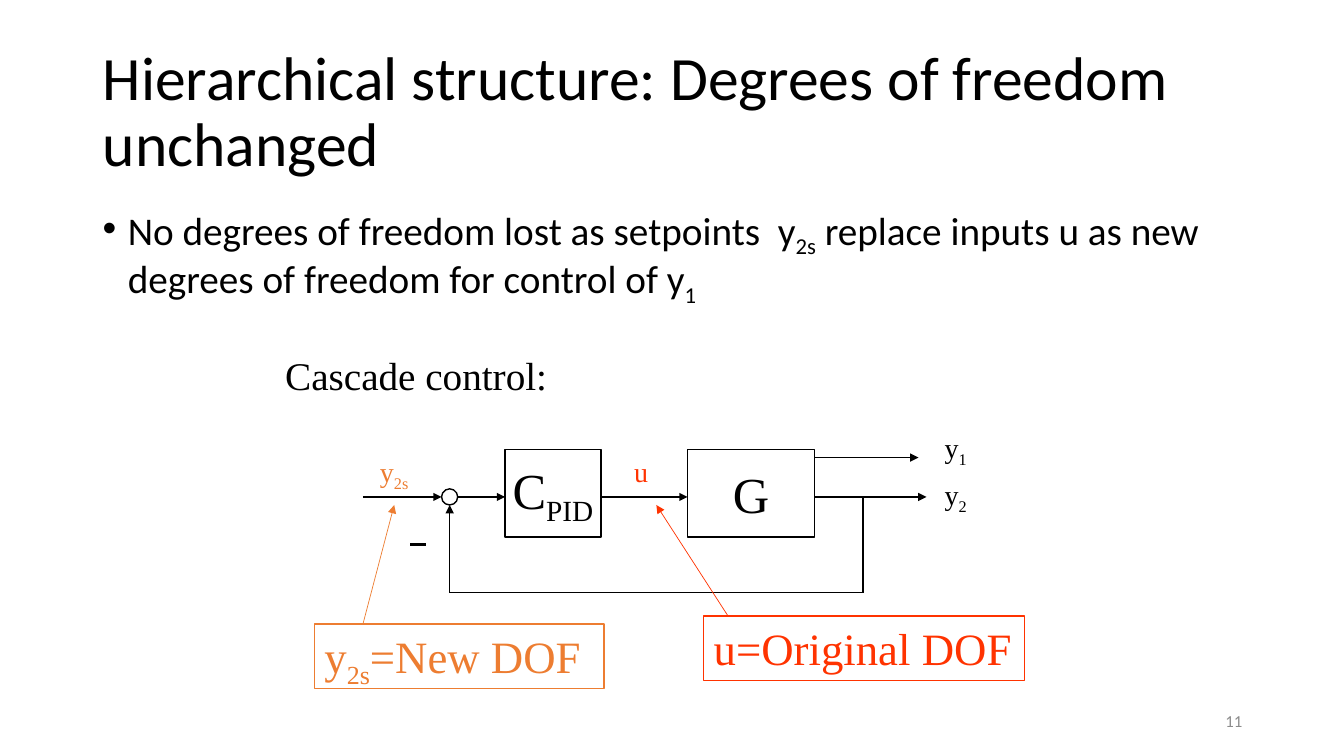
from lxml.etree import SubElement
from pptx import Presentation
from pptx.dml.color import RGBColor
from pptx.enum.shapes import MSO_CONNECTOR, MSO_SHAPE
from pptx.enum.text import MSO_ANCHOR, PP_ALIGN
from pptx.oxml.ns import qn
from pptx.util import Inches, Pt

BLACK = RGBColor(0x00, 0x00, 0x00)
ORANGE = RGBColor(0xED, 0x7D, 0x31)
RED = RGBColor(0xFF, 0x33, 0x00)
GRAY = RGBColor(0x8C, 0x8C, 0x8C)

SANS = "Calibri"
SERIF = "Times New Roman"


def write(shape, parts, size, color=BLACK, font=SERIF, wrap=False,
          anchor=MSO_ANCHOR.TOP, **paragraph_format):
    """Fill a shape with one paragraph; every second part is a subscript."""
    frame = shape.text_frame
    frame.word_wrap = wrap
    frame.vertical_anchor = anchor
    paragraph = frame.paragraphs[0]
    defaults = {"alignment": PP_ALIGN.LEFT, "space_before": Pt(0.2 * size)}
    for name, value in {**defaults, **paragraph_format}.items():
        setattr(paragraph, name, value)
    for index, part in enumerate(parts):
        run = paragraph.add_run()
        run.text = part
        for name, value in {"name": font, "size": Pt(size)}.items():
            setattr(run.font, name, value)
        run.font.color.rgb = color
        if index % 2:
            run._r.get_or_add_rPr().set("baseline", "-25000")
    return paragraph


def add_signal(start, end, color=BLACK, width=1, arrow=True):
    """Draw a straight line, with an arrowhead at its end if wanted."""
    signal = slide.shapes.add_connector(
        MSO_CONNECTOR.STRAIGHT, *[Inches(value) for value in (*start, *end)])
    signal.line.color.rgb = color
    signal.line.width = Pt(width)
    if arrow:
        SubElement(signal.line._get_or_add_ln(), qn("a:tailEnd"), type="triangle")
    SubElement(signal._element.spPr, qn("a:effectLst"))


prs = Presentation()
prs.slide_width = Inches(13.33)
prs.slide_height = Inches(7.5)
slide = prs.slides.add_slide(prs.slide_layouts[6])

# Title, statement and page number
title = slide.shapes.add_textbox(Inches(0.92), Inches(0.4), Inches(12.35), Inches(1.45))
write(title, ["Hierarchical structure: Degrees of freedom unchanged"], 44, font=SANS,
      wrap=True, anchor=MSO_ANCHOR.MIDDLE, line_spacing=0.9, space_before=Pt(0))

statement = slide.shapes.add_textbox(Inches(0.92), Inches(2), Inches(11.5), Inches(4.76))
bullet = write(
    statement,
    ["No degrees of freedom lost as setpoints  y", "2s",
     " replace inputs u as new degrees of freedom for control of y", "1"],
    28, font=SANS, wrap=True, line_spacing=0.9, space_before=Pt(10))
bullet_format = bullet._p.get_or_add_pPr()
bullet_format.set("marL", str(Inches(0.25)))
bullet_format.set("indent", str(-Inches(0.25)))
SubElement(bullet_format, qn("a:buFont"), typeface="Arial")
SubElement(bullet_format, qn("a:buChar"), char="•")

page_number = slide.shapes.add_textbox(Inches(9.42), Inches(6.95), Inches(3), Inches(0.4))
write(page_number, ["11"], 12, GRAY, SANS, wrap=True, anchor=MSO_ANCHOR.MIDDLE,
      alignment=PP_ALIGN.RIGHT, space_before=Pt(0))

# Control loop: blocks, summing point and signals
MAIN_Y, FEEDBACK_Y = 4.93, 5.88
SUM_X, SUM_RADIUS = 4.46, 0.08
BRANCH_X = 8.56
CONTROLLER_LEFT, CONTROLLER_RIGHT = 5.01, 5.96
PROCESS_LEFT, PROCESS_RIGHT = 6.82, 8.08

for left, right, parts in [(CONTROLLER_LEFT, CONTROLLER_RIGHT, ["C", "PID"]),
                           (PROCESS_LEFT, PROCESS_RIGHT, ["G"])]:
    block = slide.shapes.add_shape(MSO_SHAPE.RECTANGLE, Inches(left), Inches(4.46),
                                   Inches(right - left), Inches(0.87))
    block.shadow.inherit = False
    block.fill.background()
    block.line.color.rgb = BLACK
    block.line.width = Pt(1)
    write(block, parts, 36, anchor=MSO_ANCHOR.MIDDLE, alignment=PP_ALIGN.CENTER)

summing_point = slide.shapes.add_shape(
    MSO_SHAPE.OVAL, Inches(SUM_X - SUM_RADIUS), Inches(MAIN_Y - SUM_RADIUS),
    Inches(2 * SUM_RADIUS), Inches(2 * SUM_RADIUS))
summing_point.shadow.inherit = False
summing_point.fill.background()
summing_point.line.color.rgb = BLACK
summing_point.line.width = Pt(1)

for start_x, end_x, y in [(3.6, SUM_X - SUM_RADIUS, MAIN_Y),
                          (SUM_X + SUM_RADIUS, CONTROLLER_LEFT, MAIN_Y),
                          (CONTROLLER_RIGHT, PROCESS_LEFT, MAIN_Y),
                          (PROCESS_RIGHT, 9.19, MAIN_Y),
                          (PROCESS_RIGHT, 9.11, 4.54)]:
    add_signal((start_x, y), (end_x, y))

add_signal((BRANCH_X, MAIN_Y), (BRANCH_X, FEEDBACK_Y), arrow=False)
add_signal((BRANCH_X, FEEDBACK_Y), (SUM_X, FEEDBACK_Y), arrow=False)
add_signal((SUM_X, FEEDBACK_Y), (SUM_X, MAIN_Y + SUM_RADIUS))
add_signal((4.07, 5.4), (4.23, 5.4), width=2, arrow=False)  # minus sign

# Labels: left, top, width, height, parts, size, colour, wrap
for left, top, width, height, parts, size, color, wrap in [
    (2.73, 3.44, 2.82, 0.57, ["Cascade control:"], 28, BLACK, False),
    (3.67, 4.46, 0.51, 0.44, ["y", "2s"], 20, ORANGE, False),
    (6.19, 4.46, 0.34, 0.44, ["u"], 20, RED, False),
    (9.27, 4.22, 0.44, 0.44, ["y", "1"], 20, BLACK, False),
    (9.27, 4.69, 1.18, 0.44, ["y", "2"], 20, BLACK, True),
]:
    label = slide.shapes.add_textbox(Inches(left), Inches(top), Inches(width), Inches(height))
    write(label, parts, size, color, wrap=wrap)

# Callouts, each with an arrow to its signal
for left, top, width, parts, color, wrap, arrow_x, target_x in [
    (6.98, 6.11, 3.18, ["u=Original DOF"], RED, False, 7.22, 6.51),
    (3.12, 6.19, 2.87, ["y", "2s", "=New DOF"], ORANGE, True, 3.6, 3.91),
]:
    callout = slide.shapes.add_textbox(Inches(left), Inches(top), Inches(width), Inches(0.64))
    callout.line.color.rgb = color
    callout.line.width = Pt(1)
    write(callout, parts, 32, color, wrap=wrap)
    add_signal((arrow_x, top), (target_x, MAIN_Y + SUM_RADIUS), color, 0.5)

prs.save("out.pptx")
